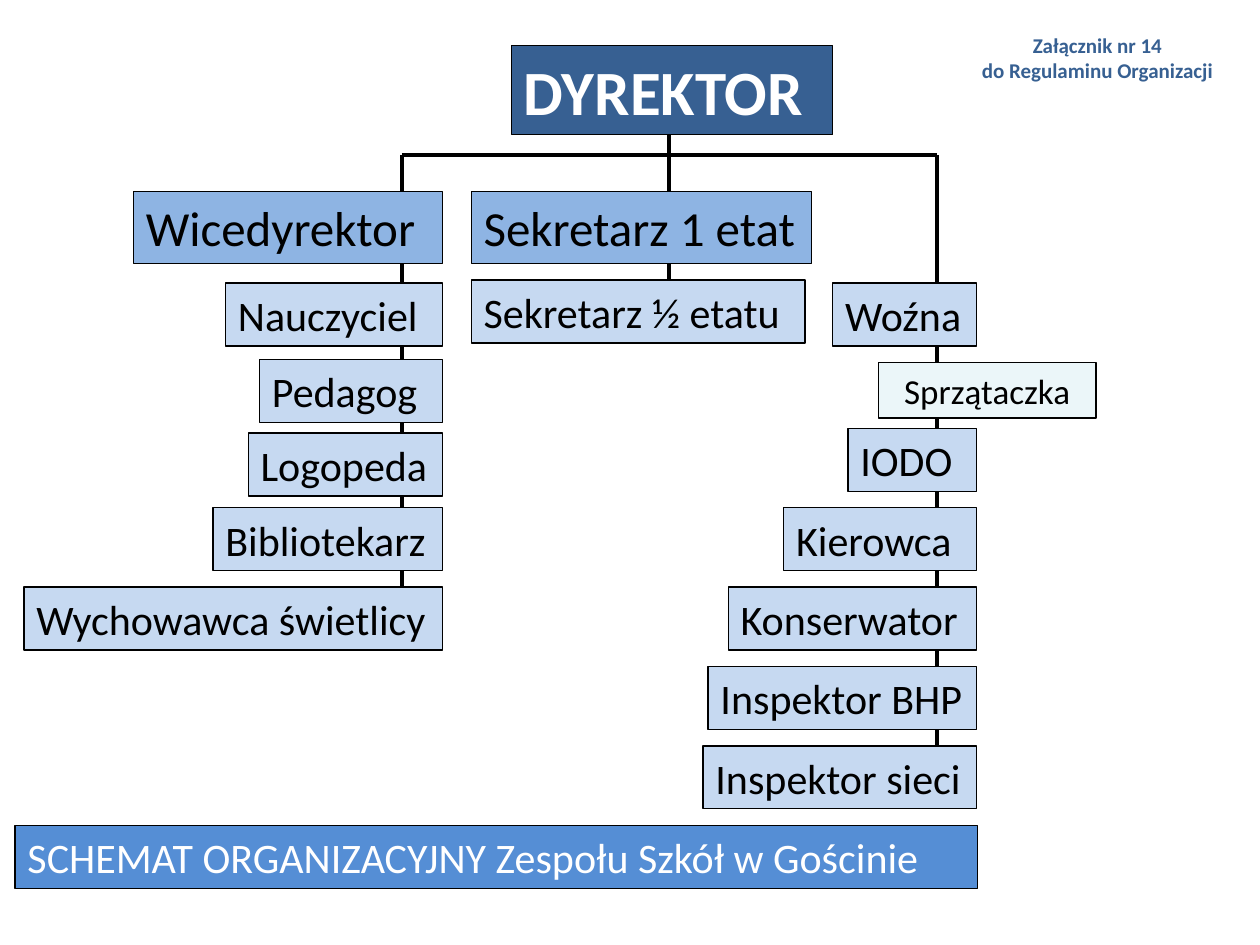
import pptx
import pptx.dml.color
import pptx.enum.shapes
import pptx.enum.text
import pptx.util
from lxml import etree

Inches = pptx.util.Inches
Pt = pptx.util.Pt
Align = pptx.enum.text.PP_ALIGN

FONT = "Calibri"
BLACK, WHITE, NAVY = "000000", "FFFFFF", "376092"
MANAGER_FILL, STAFF_FILL, CLEANER_FILL, TITLE_FILL = "8EB4E3", "C6D9F1", "EBF6F9", "558ED5"

ROW_TOP, ROW_PITCH = 1.51, 0.63
STAFF_HEIGHT = 0.5
LEFT_EDGE, RIGHT_EDGE = 3.51, 7.75      # right edges of the two staff columns
SECRETARY_LEFT = 3.74
LEFT_TRUNK, MIDDLE_TRUNK, RIGHT_TRUNK = 3.19, 5.31, 7.44
BRANCH_Y = 1.23

# name, row, width
TEACHING_STAFF = [
    ("Nauczyciel", 1.17, 1.72),
    ("Pedagog", 2.13, 1.45),
    ("Logopeda", 3.06, 1.54),
    ("Bibliotekarz", 4, 1.82),
    ("Wychowawca świetlicy", 5, 3.32),
]
SUPPORT_STAFF = [
    ("Woźna", 1.17, 1.14),
    ("IODO", 3, 1.02),
    ("Kierowca", 4, 1.53),
    ("Konserwator", 5, 1.97),
    ("Inspektor BHP", 6, 2.13),
    ("Inspektor sieci", 7, 2.17),
]


def color(hex_code):
    return pptx.dml.color.RGBColor.from_string(hex_code)


def row_y(row):
    return ROW_TOP + row * ROW_PITCH


def write(shape, lines, size, ink, bold=False, align=Align.LEFT):
    frame = shape.text_frame
    frame.word_wrap = True
    frame.text = "\n".join(lines)
    for para in frame.paragraphs:
        para.alignment = align
        para.font.name = FONT
        para.font.size = Pt(size)
        para.font.bold = bold
        para.font.color.rgb = color(ink)


def add_box(page, text, left, top, width, height=STAFF_HEIGHT,
            fill=STAFF_FILL, size=24, ink=BLACK, **style):
    box = page.shapes.add_shape(
        pptx.enum.shapes.MSO_SHAPE.RECTANGLE,
        Inches(left), Inches(top), Inches(width), Inches(height))
    box.shadow.inherit = False
    box.fill.solid()
    box.fill.fore_color.rgb = color(fill)
    box.line.color.rgb = color(BLACK)
    box.line.width = Pt(0.75)
    write(box, [text], size, ink, **style)


def add_column(page, staff, right_edge):
    """Stack staff boxes flush with a common right edge."""
    for name, row, width in staff:
        add_box(page, name, right_edge - width, row_y(row), width)


def add_line(page, x1, y1, x2, y2):
    line = page.shapes.add_connector(
        pptx.enum.shapes.MSO_CONNECTOR.STRAIGHT,
        Inches(x1), Inches(y1), Inches(x2), Inches(y2))
    line.line.color.rgb = color(BLACK)
    line.line.width = Pt(2.25)
    etree.SubElement(line._element.spPr, pptx.oxml.ns.qn("a:effectLst"))


def add_trunks(page):
    add_line(page, MIDDLE_TRUNK, 0.6, MIDDLE_TRUNK, 2.49)
    add_line(page, RIGHT_TRUNK, BRANCH_Y, RIGHT_TRUNK, 6.35)
    add_line(page, LEFT_TRUNK, BRANCH_Y, LEFT_TRUNK, 5.17)
    add_line(page, LEFT_TRUNK, BRANCH_Y, RIGHT_TRUNK, BRANCH_Y)


def add_annex_note(page):
    note = page.shapes.add_textbox(Inches(7.64), Inches(0.21), Inches(2.14), Inches(0.5))
    write(note, ["Załącznik nr 14", "do Regulaminu Organizacji"],
          12, NAVY, bold=True, align=Align.CENTER)


def main():
    deck = pptx.Presentation()
    deck.slide_width, deck.slide_height = Inches(10), Inches(7.5)
    page = deck.slides.add_slide(deck.slide_layouts[6])

    add_trunks(page)
    add_box(page, "DYREKTOR", 4.06, 0.36, 2.55, 0.71, NAVY, 36, WHITE, bold=True)
    for name, left, width in [("Wicedyrektor", LEFT_EDGE - 2.45, 2.45),
                              ("Sekretarz 1 etat", SECRETARY_LEFT, 2.7)]:
        add_box(page, name, left, row_y(0) + 0.01, width, 0.57, MANAGER_FILL, 28)
    add_box(page, "Sekretarz ½ etatu", SECRETARY_LEFT, row_y(1.13), 2.65)
    add_column(page, TEACHING_STAFF, LEFT_EDGE)
    add_column(page, SUPPORT_STAFF, RIGHT_EDGE)
    add_box(page, "Sprzątaczka", 6.97, row_y(2.17), 1.73, 0.44,
            CLEANER_FILL, 20, align=Align.CENTER)
    add_box(page, "SCHEMAT ORGANIZACYJNY Zespołu Szkół w Gościnie",
            0.12, row_y(8), 7.64, fill=TITLE_FILL, ink=WHITE)
    add_annex_note(page)

    deck.save("out.pptx")


if __name__ == "__main__":
    main()
